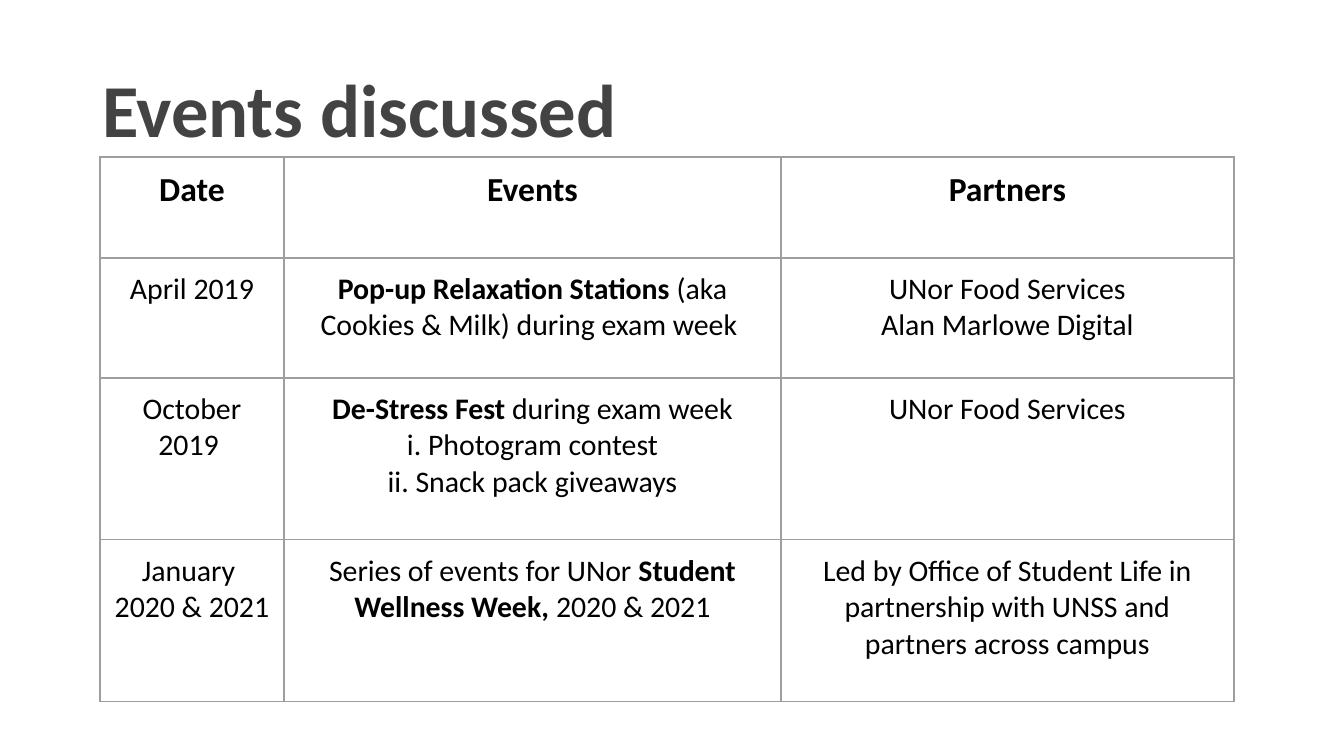
"""Builds the slide listing events, their dates and their partners."""
from dataclasses import dataclass

from lxml.etree import SubElement
from pptx import Presentation
from pptx.dml.color import RGBColor
from pptx.enum.text import MSO_ANCHOR as Anchor, PP_ALIGN as Align
from pptx.oxml.ns import qn
from pptx.util import Emu, Pt

TITLE = "Events discussed"
HEADINGS = ["Date", "Events", "Partners"]
EVENTS = [
    (
        [[("April 2019", False)]],
        [[("Pop-up Relaxation Stations", True),
          (" (aka Cookies & Milk) during exam week ", False)]],
        [[("UNor Food Services", False)], [("Alan Marlowe Digital", False)]],
    ),
    (
        [[("October 2019 ", False)]],
        [[("De-Stress Fest", True), (" during exam week", False)],
         [("i. Photogram contest", False)],
         [("ii. Snack pack giveaways", False)]],
        [[("UNor Food Services", False)]],
    ),
    (
        [[("January ", False)], [("2020 & 2021", False)]],
        [[("Series of events for UNor ", False),
          ("Student Wellness Week, ", True), ("2020 & 2021", False)]],
        [[("Led by Office of Student Life in partnership with UNSS and "
           "partners across campus", False)]],
    ),
]

SLIDE_SIZE = (1344, 756)
TITLE_BOX = (93, 40, 1158, 147)
TABLE_CORNER = (100, 157)
COLUMN_WIDTHS = [184, 497, 453]
ROW_HEIGHTS = [101, 120, 162, 162]
TITLE_INSETS = (9, 5)
CELL_INSET = 13


@dataclass(frozen=True)
class Theme:
    font: str = "Calibri"
    title: str = "434343"
    ink: str = "000000"
    grid: str = "9E9E9E"
    title_size: int = 40
    heading_size: int = 18
    body_size: int = 16
    grid_width: float = 0.75


THEME = Theme()


def px(length):
    return Emu(round(length * 914400 / 134.4))


def add_words(paragraph, words, size, color, bold):
    run = paragraph.add_run()
    run.text = words
    run.font.name = THEME.font
    run.font.size = Pt(size)
    run.font.bold = bold
    run.font.color.rgb = RGBColor.from_string(color)


def set_insets(holder, across, down):
    holder.margin_left = holder.margin_right = px(across)
    holder.margin_top = holder.margin_bottom = px(down)


def draw_borders(cell):
    properties = cell._tc.get_or_add_tcPr()
    for side in ("a:lnL", "a:lnR", "a:lnT", "a:lnB"):
        line = SubElement(properties, qn(side), w=str(Pt(THEME.grid_width)))
        fill = SubElement(line, qn("a:solidFill"))
        SubElement(fill, qn("a:srgbClr"), val=THEME.grid)


def fill_cell(cell, paragraphs, size):
    set_insets(cell, CELL_INSET, CELL_INSET)
    draw_borders(cell)
    cell.fill.background()
    frame = cell.text_frame
    for index, parts in enumerate(paragraphs):
        paragraph = frame.add_paragraph() if index else frame.paragraphs[0]
        paragraph.alignment = Align.CENTER
        for words, bold in parts:
            add_words(paragraph, words, size, THEME.ink, bold)


def add_title(slide):
    frame = slide.shapes.add_textbox(*map(px, TITLE_BOX)).text_frame
    frame.word_wrap = True
    frame.vertical_anchor = Anchor.MIDDLE
    set_insets(frame, *TITLE_INSETS)
    heading = frame.paragraphs[0]
    heading.line_spacing = 0.9
    add_words(heading, TITLE, THEME.title_size, THEME.title, True)


def add_events(slide):
    headings = [[[(heading, True)]] for heading in HEADINGS]
    rows = [headings, *EVENTS]
    extent = (sum(COLUMN_WIDTHS), sum(ROW_HEIGHTS))
    table = slide.shapes.add_table(
        len(rows), len(HEADINGS), *map(px, TABLE_CORNER + extent)).table
    table.first_row = table.horz_banding = False
    for column, width in zip(table.columns, COLUMN_WIDTHS):
        column.width = px(width)
    for row, height in zip(table.rows, ROW_HEIGHTS):
        row.height = px(height)
    for r, contents in enumerate(rows):
        size = THEME.body_size if r else THEME.heading_size
        for c, paragraphs in enumerate(contents):
            fill_cell(table.cell(r, c), paragraphs, size)


def main():
    deck = Presentation()
    deck.slide_width, deck.slide_height = map(px, SLIDE_SIZE)
    slide = deck.slides.add_slide(deck.slide_layouts[6])
    add_title(slide)
    add_events(slide)
    deck.save("out.pptx")


if __name__ == "__main__":
    main()
